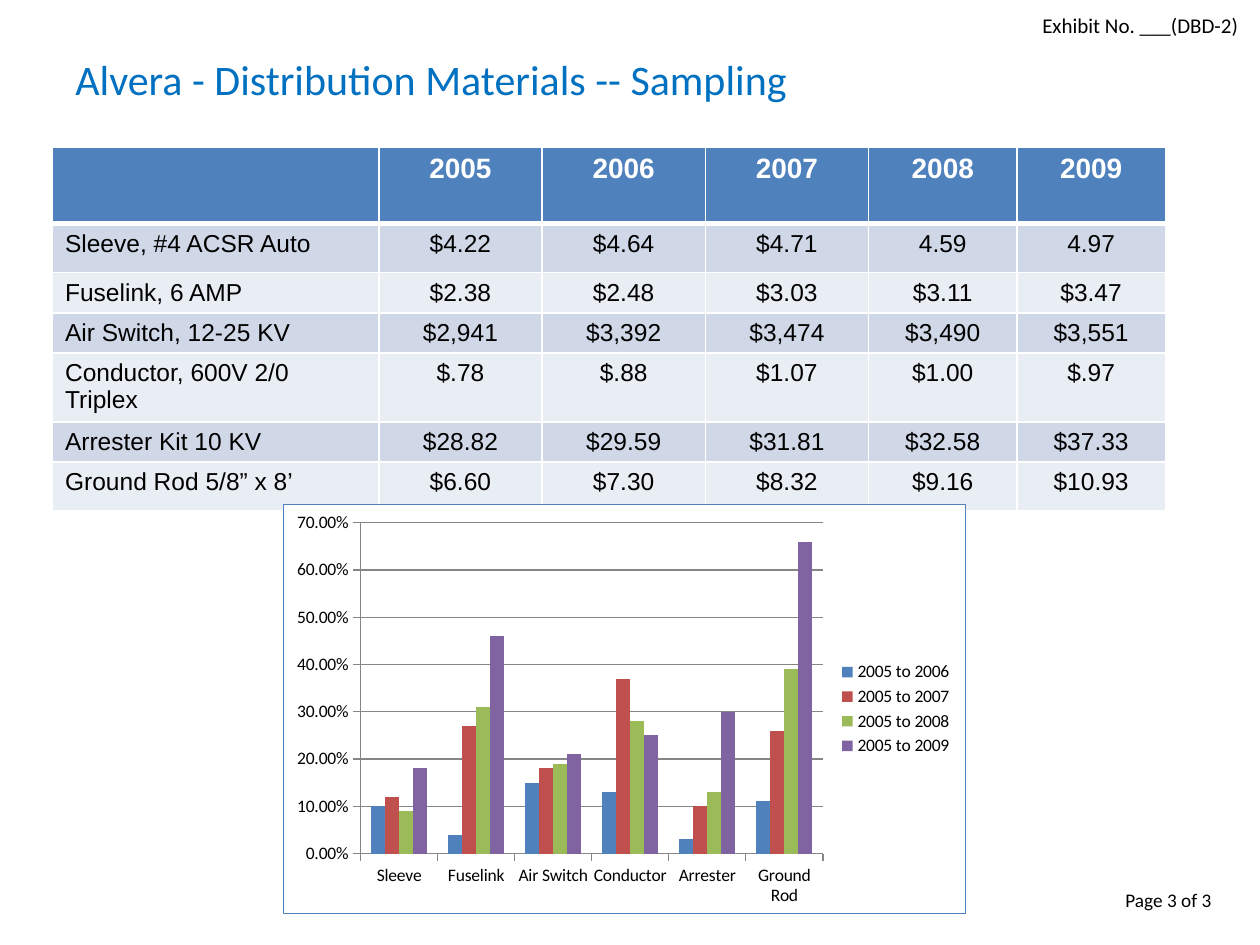
from pptx import Presentation
from pptx.chart.data import CategoryChartData
from pptx.dml.color import RGBColor
from pptx.enum.chart import XL_CHART_TYPE, XL_LEGEND_POSITION, XL_TICK_MARK
from pptx.enum.text import MSO_ANCHOR, MSO_AUTO_SIZE, PP_ALIGN
from pptx.oxml import parse_xml
from pptx.oxml.ns import nsdecls, qn
from pptx.util import Pt

LEFT, CENTER = PP_ALIGN.LEFT, PP_ALIGN.CENTER
TOP, MIDDLE = MSO_ANCHOR.TOP, MSO_ANCHOR.MIDDLE
GROW = MSO_AUTO_SIZE.SHAPE_TO_FIT_TEXT
COLUMNS = XL_CHART_TYPE.COLUMN_CLUSTERED
LEGEND_RIGHT = XL_LEGEND_POSITION.RIGHT
OUTSIDE = XL_TICK_MARK.OUTSIDE

WHITE = RGBColor(0xFF, 0xFF, 0xFF)
BLACK = RGBColor(0, 0, 0)
TITLE_BLUE = RGBColor(0x00, 0x70, 0xC0)
BLUE = RGBColor(0x4F, 0x81, 0xBD)
RED = RGBColor(0xC0, 0x50, 0x4D)
GREEN = RGBColor(0x9B, 0xBB, 0x59)
PURPLE = RGBColor(0x80, 0x64, 0xA2)
GRAY = RGBColor(0x86, 0x86, 0x86)
BANDS = (RGBColor(0xD0, 0xD8, 0xE8), RGBColor(0xE9, 0xED, 0xF4))

PRICES = [
    ("", "2005", "2006", "2007", "2008", "2009"),
    ("Sleeve, #4 ACSR Auto", "$4.22", "$4.64", "$4.71", "4.59", "4.97"),
    ("Fuselink, 6 AMP", "$2.38", "$2.48", "$3.03", "$3.11", "$3.47"),
    ("Air Switch, 12-25 KV", "$2,941", "$3,392", "$3,474", "$3,490", "$3,551"),
    ("Conductor, 600V 2/0 Triplex", "$.78", "$.88", "$1.07", "$1.00", "$.97"),
    ("Arrester Kit 10 KV", "$28.82", "$29.59", "$31.81", "$32.58", "$37.33"),
    ("Ground Rod 5/8” x 8’", "$6.60", "$7.30", "$8.32", "$9.16", "$10.93"),
]
COLUMN_WIDTHS = (186.5, 93.3, 93.3, 93.3, 84.8, 84.8)
ROW_HEIGHTS = (43.9, 28, 22.9, 22.9, 22.9, 22.9, 28)

MATERIALS = ("Sleeve", "Fuselink", "Air Switch", "Conductor", "Arrester", "Ground Rod")
INCREASES = [
    ("2005 to 2006", BLUE, (0.1, 0.04, 0.15, 0.13, 0.03, 0.11)),
    ("2005 to 2007", RED, (0.12, 0.27, 0.18, 0.37, 0.1, 0.26)),
    ("2005 to 2008", GREEN, (0.09, 0.31, 0.19, 0.28, 0.13, 0.39)),
    ("2005 to 2009", PURPLE, (0.18, 0.46, 0.21, 0.25, 0.3, 0.66)),
]


class MaterialsSlide:
    text_font = "Calibri"
    table_font = "Arial"

    def __init__(self, slide):
        self.shapes = slide.shapes

    def style(self, font, name, size, color, bold=False):
        font.name = name
        font.size = Pt(size)
        font.bold = bold
        font.color.rgb = color

    def text(self, wording, box, size, color=BLACK, align=LEFT, anchor=TOP, wrap=True):
        frame = self.shapes.add_textbox(*map(Pt, box)).text_frame
        frame.word_wrap = wrap
        frame.vertical_anchor = anchor
        if not wrap:
            frame.auto_size = GROW
        paragraph = frame.paragraphs[0]
        paragraph.text = wording
        paragraph.alignment = align
        self.style(paragraph.font, self.text_font, size, color)

    def borders(self, cell, bottom):
        properties = cell._tc.get_or_add_tcPr()
        edges = (("lnL", 1), ("lnR", 1), ("lnT", 1), ("lnB", bottom))
        for position, (edge, width) in enumerate(edges):
            properties.insert(position, parse_xml(
                f'<a:{edge} {nsdecls("a")} w="{Pt(width)}"><a:solidFill>'
                f'<a:srgbClr val="{WHITE}"/></a:solidFill></a:{edge}>'))

    def table(self, rows, left, top, widths, heights):
        grid = self.shapes.add_table(
            len(rows), len(widths), Pt(left), Pt(top), Pt(sum(widths)), Pt(sum(heights))).table
        for column, width in zip(grid.columns, widths):
            column.width = Pt(width)
        for r, (row, height) in enumerate(zip(rows, heights)):
            grid.rows[r].height = Pt(height)
            header = r == 0
            for c, wording in enumerate(row):
                cell = grid.cell(r, c)
                cell.margin_bottom = Pt(2.2)
                cell.fill.solid()
                cell.fill.fore_color.rgb = BLUE if header else BANDS[(r - 1) % 2]
                self.borders(cell, 3 if header else 1)
                paragraph = cell.text_frame.paragraphs[0]
                paragraph.text = wording
                paragraph.alignment = CENTER if c else LEFT
                self.style(paragraph.font, self.table_font, 16 if header else 14,
                           WHITE if header else BLACK, header)

    def frame_chart(self, chart):
        frame = parse_xml(
            f'<c:spPr {nsdecls("c", "a")}><a:solidFill><a:srgbClr val="{WHITE}"/></a:solidFill>'
            f'<a:ln w="{Pt(0.75)}"><a:solidFill><a:srgbClr val="{BLUE}"/></a:solidFill></a:ln>'
            '</c:spPr>')
        chart._chartSpace.find(qn("c:chart")).addnext(frame)

    def column_chart(self, categories, series, box):
        data = CategoryChartData(number_format="0.00%")
        data.categories = categories
        for name, _, values in series:
            data.add_series(name, values)
        chart = self.shapes.add_chart(COLUMNS, *map(Pt, box), data).chart
        self.style(chart.font, self.text_font, 10, BLACK)
        self.frame_chart(chart)
        chart.has_title = False
        chart.has_legend = True
        chart.legend.position = LEGEND_RIGHT
        chart.legend.include_in_layout = False
        plot = chart.plots[0]
        plot.vary_by_categories = False
        plot.gap_width = 150
        plot.overlap = 0
        for bars, (_, color, _) in zip(plot.series, series):
            bars.format.fill.solid()
            bars.format.fill.fore_color.rgb = color
        for axis in (chart.category_axis, chart.value_axis):
            axis.major_tick_mark = OUTSIDE
            axis.format.line.color.rgb = GRAY
        increase = chart.value_axis
        increase.minimum_scale, increase.maximum_scale, increase.major_unit = 0, 0.7, 0.1
        increase.has_major_gridlines = True
        increase.major_gridlines.format.line.color.rgb = GRAY
        increase.tick_labels.number_format = "0.00%"
        increase.tick_labels.number_format_is_linked = False


def main():
    deck = Presentation()
    deck.slide_width, deck.slide_height = Pt(720), Pt(540)
    page = MaterialsSlide(deck.slides.add_slide(deck.slide_layouts[6]))
    page.text("Alvera - Distribution Materials -- Sampling", (36, 0, 648, 90), 24,
              TITLE_BLUE, anchor=MIDDLE)
    page.table(PRICES, 30, 84, COLUMN_WIDTHS, ROW_HEIGHTS)
    page.column_chart(MATERIALS, INCREASES, (161.7, 288, 390.3, 234.3))
    page.text("Exhibit No. ___(DBD-2)", (583.2, 0, 136.8, 28.8), 12, align=CENTER, anchor=MIDDLE)
    page.text("Page 3 of 3", (636, 504, 64, 20.6), 11, wrap=False)
    deck.save("out.pptx")


if __name__ == "__main__":
    main()
